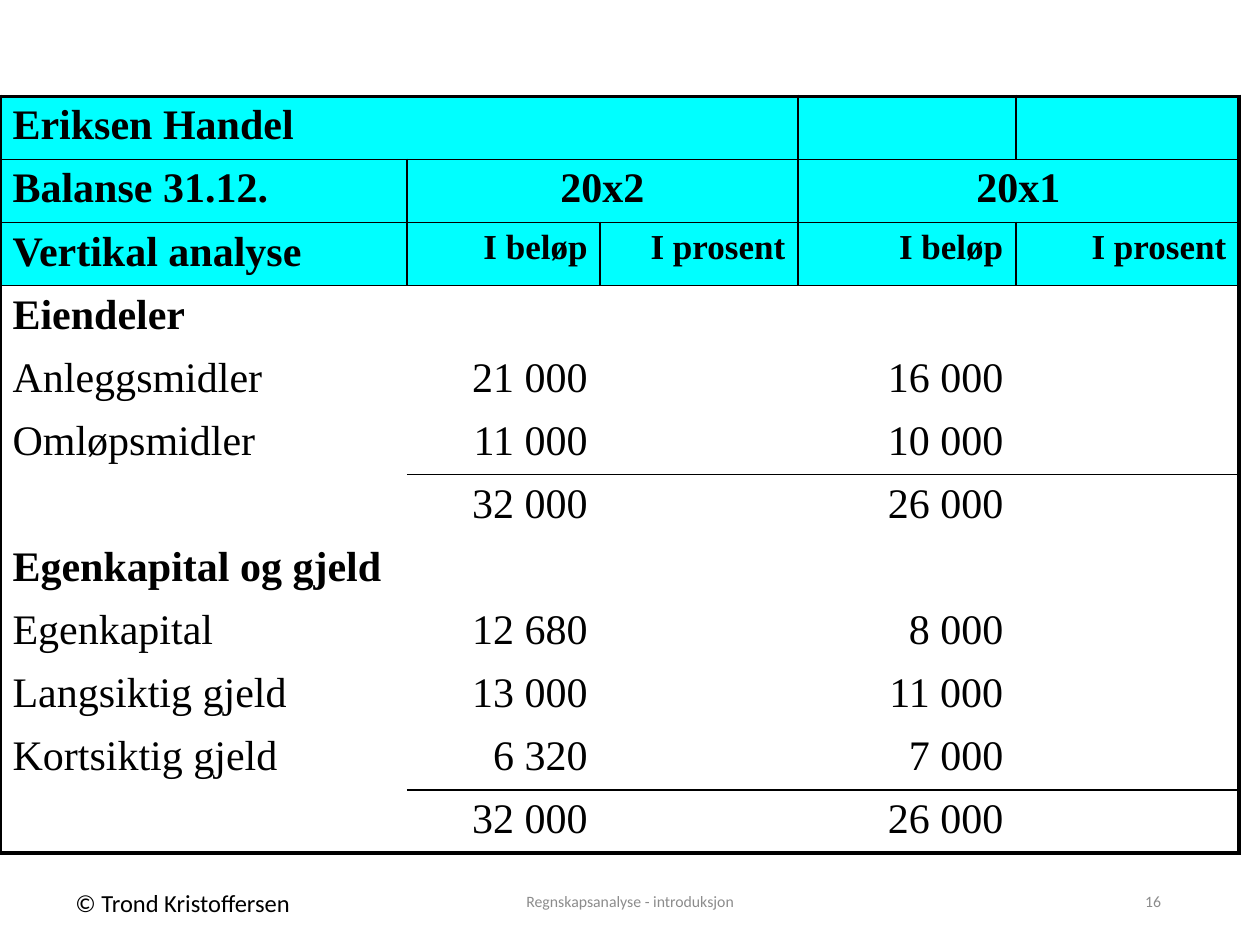
from lxml import etree
from pptx import Presentation
from pptx.dml.color import RGBColor
from pptx.enum.text import MSO_ANCHOR, PP_ALIGN
from pptx.oxml.ns import qn
from pptx.util import Pt

LEFT, CENTER, RIGHT = PP_ALIGN.LEFT, PP_ALIGN.CENTER, PP_ALIGN.RIGHT
TOP, MIDDLE = MSO_ANCHOR.TOP, MSO_ANCHOR.MIDDLE

THEME = {
    "ink": "000000", "muted": "8C8C8C", "header": "00FFFF",
    "table_font": "Times New Roman", "footer_font": "Calibri",
    "body": 24, "subhead": 20, "credit": 14, "footer": 9,
    "frame": 2.25, "rule": 1,
}


def write_text(frame, text, size, font, color=THEME["ink"], bold=False, align=LEFT):
    paragraph = frame.paragraphs[0]
    paragraph.alignment = align
    run = paragraph.add_run()
    run.text = text
    run.font.size = Pt(size)
    run.font.name = font
    run.font.bold = bold
    run.font.color.rgb = RGBColor.from_string(color)


def set_border(cell, side, weight):
    """Draw one side (L, R, T or B) of a cell; weight 0 hides it."""
    line = etree.SubElement(cell._tc.get_or_add_tcPr(), qn(f"a:ln{side}"), w=str(Pt(weight)))
    if weight:
        fill = etree.SubElement(line, qn("a:solidFill"))
        etree.SubElement(fill, qn("a:srgbClr"), val=THEME["ink"])
    else:
        etree.SubElement(line, qn("a:noFill"))


balance = [
    ["Eriksen Handel", "", "", "", ""],
    ["Balanse 31.12.", "20x2", "", "20x1", ""],
    ["Vertikal analyse", "I beløp", "I prosent", "I beløp", "I prosent"],
    ["Eiendeler", "", "", "", ""],
    ["Anleggsmidler", "21 000", "", "16 000", ""],
    ["Omløpsmidler", "11 000", "", "10 000", ""],
    ["", "32 000", "", "26 000", ""],
    ["Egenkapital og gjeld", "", "", "", ""],
    ["Egenkapital", "12 680", "", "8 000", ""],
    ["Langsiktig gjeld", "13 000", "", "11 000", ""],
    ["Kortsiktig gjeld", "6 320", "", "7 000", ""],
    ["", "32 000", "", "26 000", ""],
]
column_widths = [232.5, 110.5, 113, 124.5, 127.5]
row_height = 36
header_rows = 3
year_row, subhead_row = 1, 2
section_rows = (3, 7)
total_rows = (6, 11)
merges = [(0, 0, 2), (1, 1, 2), (1, 3, 4)]  # row, first column, last column

prs = Presentation()
prs.slide_width, prs.slide_height = Pt(720), Pt(540)
slide = prs.slides.add_slide(prs.slide_layouts[6])

# Footer line
footers = [
    ("© Trond Kristoffersen", 36, 504, 140.5, 24, TOP, False,
     dict(size=THEME["credit"])),
    ("Regnskapsanalyse - introduksjon", 238.5, 500.5, 243, 28.5, MIDDLE, True,
     dict(size=THEME["footer"], color=THEME["muted"], align=CENTER)),
    ("16", 508.5, 500.5, 162, 28.5, MIDDLE, True,
     dict(size=THEME["footer"], color=THEME["muted"], align=RIGHT)),
]
for text, left, top, width, height, anchor, wrap, style in footers:
    frame = slide.shapes.add_textbox(Pt(left), Pt(top), Pt(width), Pt(height)).text_frame
    frame.word_wrap = wrap
    frame.vertical_anchor = anchor
    write_text(frame, text, font=THEME["footer_font"], **style)

# Balance sheet
row_count, column_count = len(balance), len(column_widths)
table = slide.shapes.add_table(
    row_count, column_count, Pt(0), Pt(55), Pt(sum(column_widths)), Pt(row_height * row_count)
).table
table.first_row = table.horz_banding = False
for column, width in zip(table.columns, column_widths):
    column.width = Pt(width)
for row in table.rows:
    row.height = Pt(row_height)
for row, first, last in merges:
    table.cell(row, first).merge(table.cell(row, last))

for r, entries in enumerate(balance):
    is_header = r < header_rows
    for c, text in enumerate(entries):
        cell = table.cell(r, c)
        end = c + (cell.span_width if cell.is_merge_origin else 1)

        for side, edge in (("L", c), ("R", end)):
            if edge in (0, column_count):
                weight = THEME["frame"]
            elif is_header and not table.cell(r, edge).is_spanned:
                weight = THEME["rule"]
            else:
                weight = 0
            set_border(cell, side, weight)

        for side, edge in (("T", r), ("B", r + 1)):
            if edge in (0, row_count):
                weight = THEME["frame"]
            elif edge <= header_rows or (edge in total_rows and c > 0):
                weight = THEME["rule"]
            else:
                weight = 0
            set_border(cell, side, weight)

        if is_header:
            cell.fill.solid()
            cell.fill.fore_color.rgb = RGBColor.from_string(THEME["header"])
        else:
            cell.fill.background()

        if text:
            align = LEFT if c == 0 else CENTER if r == year_row else RIGHT
            size = THEME["subhead"] if r == subhead_row and c > 0 else THEME["body"]
            write_text(cell.text_frame, text, size, THEME["table_font"],
                       bold=is_header or r in section_rows, align=align)

prs.save("out.pptx")
